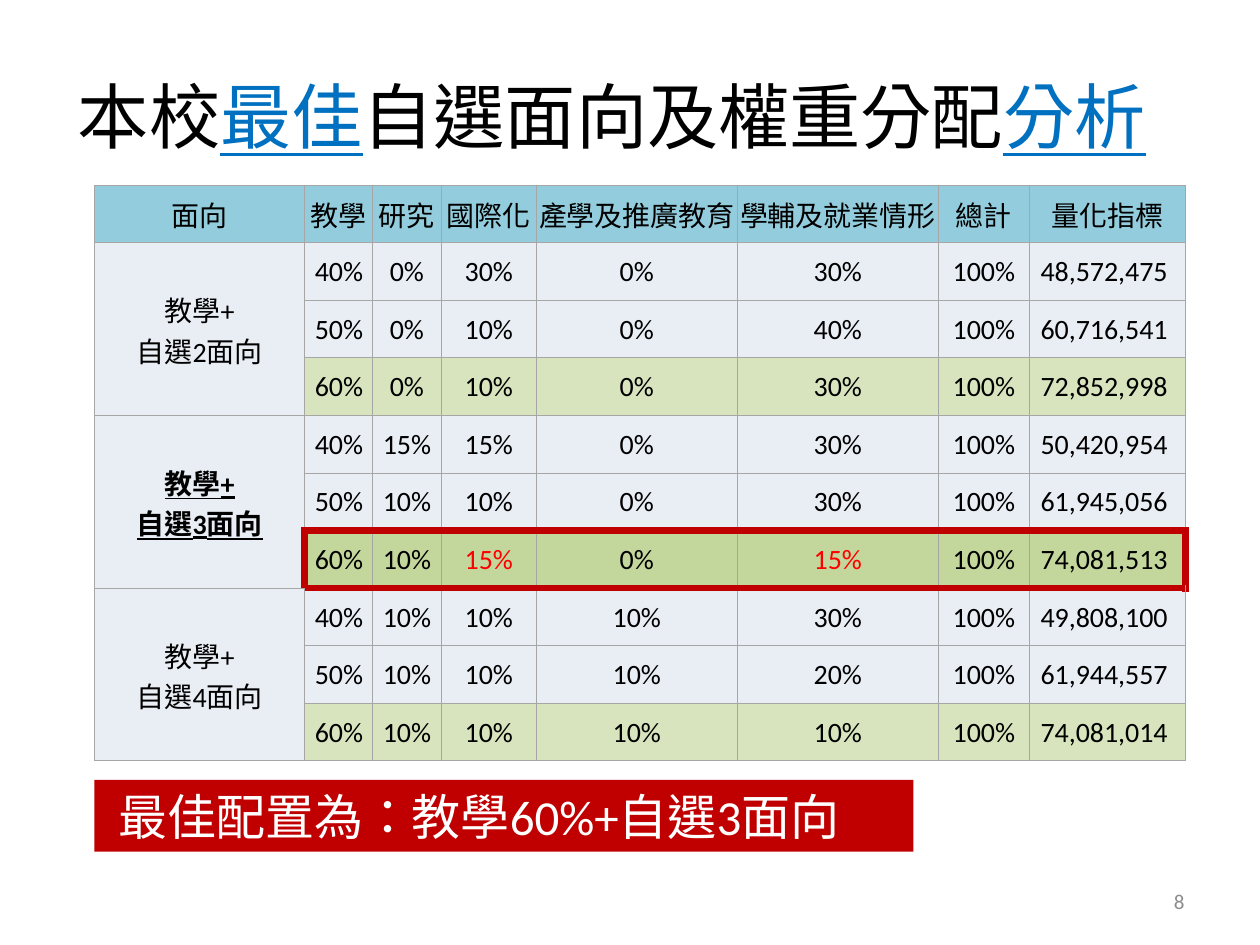
from lxml.etree import SubElement
from pptx import Presentation
from pptx.dml.color import RGBColor
from pptx.enum.lang import MSO_LANGUAGE_ID
from pptx.enum.shapes import MSO_SHAPE
from pptx.enum.text import MSO_ANCHOR, PP_ALIGN
from pptx.oxml.ns import qn
from pptx.util import Inches, Pt

BLACK = RGBColor(0, 0, 0)
WHITE = RGBColor(255, 255, 255)
GRAY = RGBColor(0x8C, 0x8C, 0x8C)
BLUE = RGBColor(0x00, 0x70, 0xC0)
RED = RGBColor(0xFF, 0, 0)
CRIMSON = RGBColor(0xC0, 0, 0)
RULE = RGBColor(0xA6, 0xA6, 0xA6)
TEAL = RGBColor(0x93, 0xCD, 0xDD)
PALE = RGBColor(0xE9, 0xED, 0xF4)
GREEN = RGBColor(0xD7, 0xE4, 0xBD)
OLIVE = RGBColor(0xC3, 0xD6, 0x9B)


def add_run(para, text, size, color, bold=False, under=False):
    run = para.add_run()
    run.text = text
    font = run.font
    font.name, font.size = "Calibri", Pt(size)
    font.bold, font.underline = bold, under
    font.color.rgb = color
    font.language_id = MSO_LANGUAGE_ID.TRADITIONAL_CHINESE


def add_edge(cell, side, color, width):
    line = SubElement(cell._tc.get_or_add_tcPr(), qn("a:ln" + side), w=str(Pt(width)))
    fill = SubElement(line, qn("a:solidFill"))
    SubElement(fill, qn("a:srgbClr"), val=str(color))


prs = Presentation()
prs.slide_width, prs.slide_height = Inches(10), Inches(7.5)
slide = prs.slides.add_slide(prs.slide_layouts[6])

# Page number
box = slide.shapes.add_textbox(Inches(7.17), Inches(6.95), Inches(2.33), Inches(0.4))
frame = box.text_frame
frame.word_wrap = True
frame.vertical_anchor = MSO_ANCHOR.MIDDLE
frame.paragraphs[0].alignment = PP_ALIGN.RIGHT
add_run(frame.paragraphs[0], "8", 12, GRAY)

# Conclusion banner, wide enough for its text on one line
banner = slide.shapes.add_shape(
    MSO_SHAPE.RECTANGLE, Inches(0.75), Inches(6.19), Inches(6.5), Inches(0.57))
banner.shadow.inherit = False
banner.fill.solid()
banner.fill.fore_color.rgb = CRIMSON
banner.line.fill.background()
frame = banner.text_frame
frame.word_wrap = True
frame.margin_left = Inches(0.19)
frame.vertical_anchor = MSO_ANCHOR.TOP
frame.paragraphs[0].alignment = PP_ALIGN.LEFT
add_run(frame.paragraphs[0], "最佳配置為：教學60%+自選3面向", 28, WHITE)

# Title
box = slide.shapes.add_textbox(Inches(0.52), Inches(0.29), Inches(9), Inches(1.25))
frame = box.text_frame
frame.word_wrap = True
frame.vertical_anchor = MSO_ANCHOR.MIDDLE
for text, key in (("本校", False), ("最佳", True),
                  ("自選面向及權重分配", False), ("分析", True)):
    add_run(frame.paragraphs[0], text, 40.7, BLUE if key else BLACK, under=key)

# Table data: the first column is merged over each group of three rows
BEST = 6
rows = [
    ["面向", "教學", "研究", "國際化", "產學及推廣教育", "學輔及就業情形", "總計", "量化指標"],
    ["教學+\n自選2面向", "40%", "0%", "30%", "0%", "30%", "100%", "48,572,475 "],
    ["", "50%", "0%", "10%", "0%", "40%", "100%", "60,716,541 "],
    ["", "60%", "0%", "10%", "0%", "30%", "100%", "72,852,998 "],
    ["教學+\n自選3面向", "40%", "15%", "15%", "0%", "30%", "100%", "50,420,954 "],
    ["", "50%", "10%", "10%", "0%", "30%", "100%", "61,945,056 "],
    ["", "60%", "10%", "15%", "0%", "15%", "100%", "74,081,513 "],
    ["教學+\n自選4面向", "40%", "10%", "10%", "10%", "30%", "100%", "49,808,100 "],
    ["", "50%", "10%", "10%", "10%", "20%", "100%", "61,944,557 "],
    ["", "60%", "10%", "10%", "10%", "10%", "100%", "74,081,014 "],
]
widths = [1.67, 0.54, 0.54, 0.76, 1.59, 1.6, 0.72, 1.24]
last = len(widths) - 1
table = slide.shapes.add_table(
    len(rows), len(widths), Inches(0.75), Inches(1.47), Inches(8.66), Inches(4.57)).table
for col, width in zip(table.columns, widths):
    col.width = Inches(width)
for top in (1, 4, 7):
    table.cell(top, 0).merge(table.cell(top + 2, 0))

for r, row in enumerate(rows):
    for c, text in enumerate(row):
        cell = table.cell(r, c)
        cell.vertical_anchor = MSO_ANCHOR.MIDDLE
        cell.margin_left = cell.margin_right = cell.margin_top = Inches(0.01)
        cell.margin_bottom = 0

        # Thin rules, with a thick frame round the best row
        thick = set()
        if c > 0:
            thick = {BEST - 1: {"B"}, BEST: {"T", "B"}, BEST + 1: {"T"}}.get(r, set())
        if r == BEST and c in (1, last):
            thick = thick | {"L" if c == 1 else "R"}
        for side in "LRTB":
            if side in thick:
                add_edge(cell, side, CRIMSON, 4.5)
            else:
                add_edge(cell, side, RULE, 0.5)

        # Fill by row
        if r == 0:
            color = TEAL
        elif c == 0 or r % 3:
            color = PALE
        else:
            color = OLIVE if r == BEST else GREEN
        cell.fill.solid()
        cell.fill.fore_color.rgb = color

        # Text
        if not text:
            continue
        strong = r == 4 and c == 0
        ink = RED if r == BEST and text == "15%" else BLACK
        for i, part in enumerate(text.split("\n")):
            frame = cell.text_frame
            para = frame.add_paragraph() if i else frame.paragraphs[0]
            para.alignment = PP_ALIGN.CENTER
            add_run(para, part, 16, ink, strong, strong)

prs.save("out.pptx")
